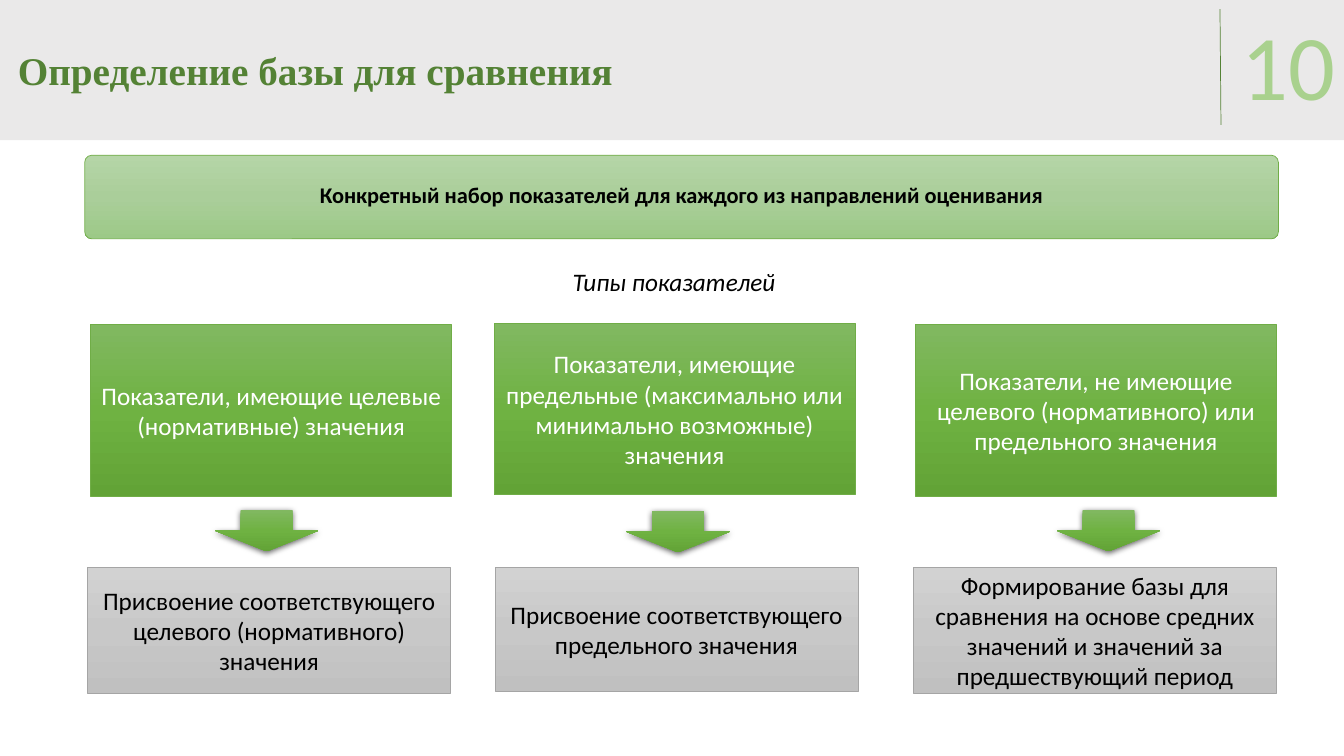
from copy import deepcopy
from lxml import etree
from pptx import Presentation
from pptx.dml.color import RGBColor
from pptx.enum.shapes import MSO_CONNECTOR, MSO_SHAPE
from pptx.enum.text import MSO_ANCHOR, PP_ALIGN
from pptx.oxml.ns import qn
from pptx.util import Inches, Pt

RECT, ROUND, DOWN = MSO_SHAPE.RECTANGLE, MSO_SHAPE.ROUNDED_RECTANGLE, MSO_SHAPE.DOWN_ARROW
LEFT, MID, RIGHT = PP_ALIGN.LEFT, PP_ALIGN.CENTER, PP_ALIGN.RIGHT
TOP, CENTER = MSO_ANCHOR.TOP, MSO_ANCHOR.MIDDLE
STRAIGHT = MSO_CONNECTOR.STRAIGHT

BLACK = RGBColor(0x00, 0x00, 0x00)
WHITE = RGBColor(0xFF, 0xFF, 0xFF)
DARK = RGBColor(0x54, 0x82, 0x35)
LIGHT = RGBColor(0xA9, 0xD1, 0x8E)
EDGE = RGBColor(0x70, 0xAD, 0x47)
RIM = RGBColor(0xA5, 0xA5, 0xA5)
BAND = RGBColor(0xAF, 0xAB, 0xAB)
PALE = [RGBColor(0xB5, 0xD5, 0xA7), RGBColor(0xAA, 0xCE, 0x9A), RGBColor(0x9C, 0xC9, 0x87)]
GREEN = [RGBColor(0x81, 0xB8, 0x61), RGBColor(0x6F, 0xB2, 0x42), RGBColor(0x62, 0xA3, 0x36)]
GRAY = [RGBColor(0xD2, 0xD2, 0xD2), RGBColor(0xC8, 0xC8, 0xC8), RGBColor(0xC0, 0xC0, 0xC0)]

deck = Presentation()
deck.slide_width, deck.slide_height = Inches(13.33), Inches(7.5)
slide = deck.slides.add_slide(deck.slide_layouts[6])
shapes = slide.shapes


def write(shape, text, color, size=18, align=MID, anchor=CENTER, space=1.0, face="Calibri", **style):
    frame = shape.text_frame
    frame.word_wrap = True
    frame.vertical_anchor = anchor
    para = frame.paragraphs[0]
    para.alignment, para.line_spacing = align, space
    run = para.add_run()
    run.text = text
    run.font.color.rgb = color
    for key, value in {"name": face, "size": Pt(size), **style}.items():
        setattr(run.font, key, value)


def block(kind, box, shades, edge=None):
    shape = shapes.add_shape(kind, *map(Inches, box))
    shape.shadow.inherit = False
    # Vertical blend of three shades
    shape.fill.gradient()
    shape.fill.gradient_angle = 270
    stops = shape._element.spPr.find(".//" + qn("a:gsLst"))
    stops.insert(1, deepcopy(stops[0]))
    for stop, shade, pos in zip(shape.fill.gradient_stops, shades, (0, 0.5, 1)):
        stop.color.rgb, stop.position = shade, pos
    if edge:
        shape.line.color.rgb, shape.line.width = edge, Pt(0.5)
    else:
        shape.line.fill.background()
    return shape


# Header band
band = shapes.add_shape(RECT, 0, 0, deck.slide_width, Inches(1.39))
band.shadow.inherit = False
band.fill.solid()
band.fill.fore_color.rgb = BAND
band.line.fill.background()
tint = band._element.spPr.find(".//" + qn("a:srgbClr"))
etree.SubElement(tint, qn("a:alpha"), val="25000")

# Title, slide number and subtitle
for box, text, color, look in [
    ((0.08, 0, 8.4, 1.45), "Определение базы для сравнения", DARK,
     dict(size=28, align=LEFT, space=0.9, face="Times New Roman", bold=True)),
    ((12.17, 0.23, 1.17, 0.81), "10", LIGHT, dict(size=66, align=RIGHT)),
    ((4.27, 2.59, 4.83, 0.4), "Типы показателей", BLACK, dict(anchor=TOP, italic=True)),
]:
    write(shapes.add_textbox(*map(Inches, box)), text, color, **look)

# Rule beside the number
rule = shapes.add_connector(STRAIGHT, *map(Inches, (12.1, 0.09, 12.11, 1.24)))
rule.line.color.rgb, rule.line.width = DARK, Pt(0.5)
etree.SubElement(rule._element.spPr, qn("a:effectLst"))

# Wide heading
head = block(ROUND, (0.84, 1.54, 11.84, 0.83), PALE, EDGE)
head.adjustments[0] = 0.086
write(head, "Конкретный набор показателей для каждого из направлений оценивания",
      BLACK, size=16, space=0.8, bold=True)

# Columns: type of measure, arrow, way to set the base
COLS = [
    ((0.9, 3.22), (2.13, 5.06), (0.87, 1.25),
     "Показатели, имеющие целевые (нормативные) значения",
     "Присвоение соответствующего целевого (нормативного) значения"),
    ((4.9, 3.21), (6.21, 5.07), (4.91, 1.23),
     "Показатели, имеющие предельные (максимально или минимально возможные) значения",
     "Присвоение соответствующего предельного значения"),
    ((9.08, 3.22), (10.48, 5.06), (9.06, 1.25),
     "Показатели, не имеющие целевого (нормативного) или предельного значения",
     "Формирование базы для сравнения на основе средних значений и значений за предшествующий период"),
]
for start, tip, (left, high), kind, base in COLS:
    write(block(RECT, (*start, 3.58, 1.7), GREEN, EDGE), kind, WHITE)
    write(block(RECT, (left, 5.63, 3.6, high), GRAY, RIM), base, BLACK)
    arrow = block(DOWN, (*tip, 1.03, 0.41), GREEN)
    glow = etree.SubElement(
        arrow._element.spPr.find(qn("a:effectLst")), qn("a:outerShdw"),
        blurRad=str(Pt(4.5)), dist=str(Pt(1.5)), dir="5400000", algn="ctr", rotWithShape="0")
    ink = etree.SubElement(glow, qn("a:srgbClr"), val=str(BLACK))
    etree.SubElement(ink, qn("a:alpha"), val="63000")

deck.save("out.pptx")
